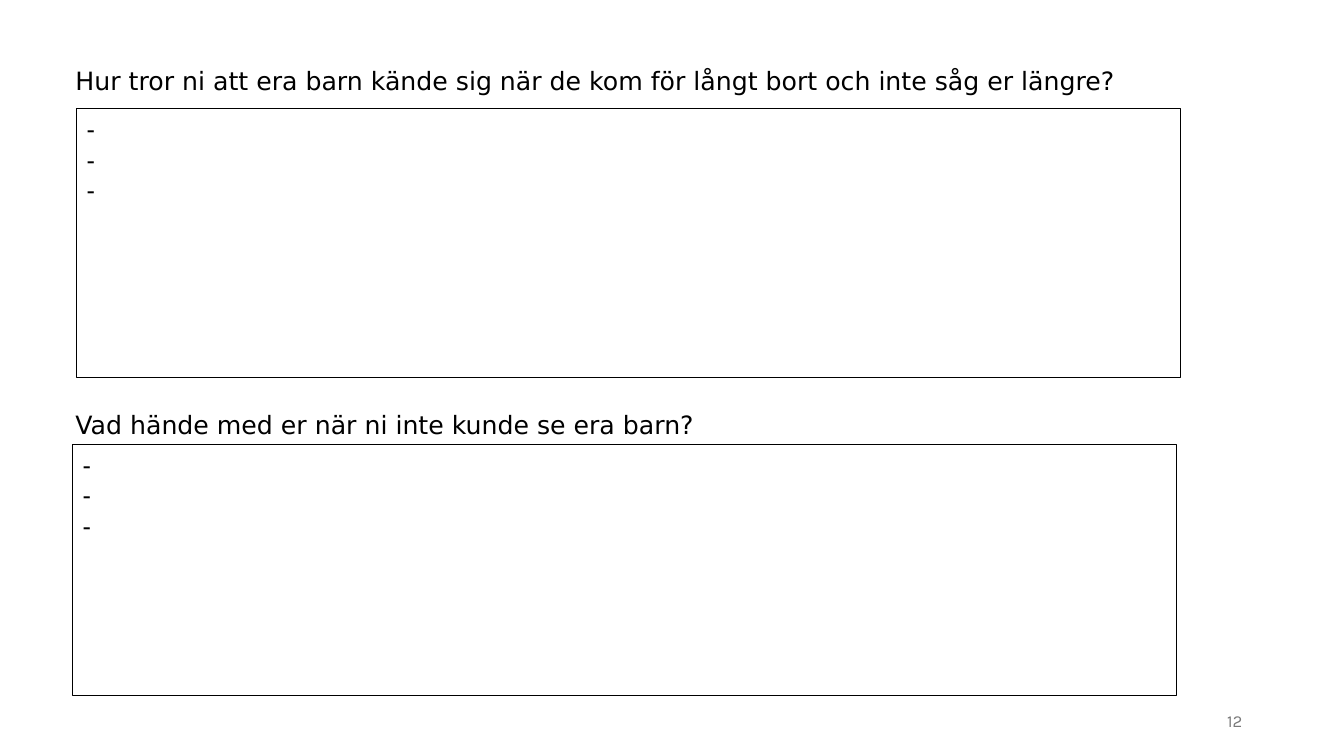
"""Builds a slide with two questions, each above an answer box."""
from pptx import Presentation
from pptx.dml.color import RGBColor
from pptx.enum.shapes import MSO_SHAPE as Shape
from pptx.enum.text import MSO_ANCHOR as Anchor, PP_ALIGN as Align
from pptx.util import Inches, Pt

WIDE, HIGH = 13.33, 7.5
LEFT, ROW, SPAN = 0.65, 0.4, 10.95


def color(code):
    """Turn a hex string into a colour."""
    return RGBColor.from_string(code)


def inches(*box):
    """Turn a box in inches into lengths."""
    return [Inches(side) for side in box]


def write(shape, text, size=18, font="DejaVu Sans", ink="000000",
          align=Align.LEFT, anchor=Anchor.TOP):
    """Fill a shape with text, one paragraph per line."""
    frame = shape.text_frame
    frame.word_wrap = True
    frame.vertical_anchor = anchor
    frame.text = text
    for para in frame.paragraphs:
        para.alignment = align
        for run in para.runs:
            run.font.size = Pt(size)
            run.font.name = font
            run.font.color.rgb = color(ink)


def label(slide, box, text, **style):
    """Add a text box."""
    write(slide.shapes.add_textbox(*inches(*box)), text, **style)


def answer(slide, box, lines=3):
    """Add a framed box with a dash for each answer."""
    frame = slide.shapes.add_shape(Shape.RECTANGLE, *inches(*box))
    frame.shadow.inherit = False
    frame.fill.solid()
    frame.fill.fore_color.rgb = color("FFFFFF")
    frame.line.color.rgb = color("000000")
    frame.line.width = Pt(0.75)
    write(frame, "\n".join(["-"] * lines), font="Arial")


def question(slide, box, text, shift, gap):
    """Place a question and its answer box within the given box."""
    left, top, width, height = box
    drop = ROW + gap
    label(slide, (left, top, width, ROW), text)
    answer(slide, (left + shift, top + drop, width, height - drop))


def main():
    """Build and save the slide."""
    deck = Presentation()
    deck.slide_width, deck.slide_height = inches(WIDE, HIGH)
    slide = deck.slides.add_slide(deck.slide_layouts[6])
    question(slide, (LEFT, 0.6, SPAN, 3.15),
             "Hur tror ni att era barn kände sig när de kom för långt bort "
             "och inte såg er längre?", shift=0.11, gap=0.08)
    question(slide, (LEFT, 4.01, SPAN, 2.89),
             "Vad hände med er när ni inte kunde se era barn?",
             shift=0.07, gap=0)
    label(slide, (9.42, 6.95, 3, ROW), "12", size=12, font="Karla",
          ink="797979", align=Align.RIGHT, anchor=Anchor.MIDDLE)
    deck.save("out.pptx")


if __name__ == "__main__":
    main()
